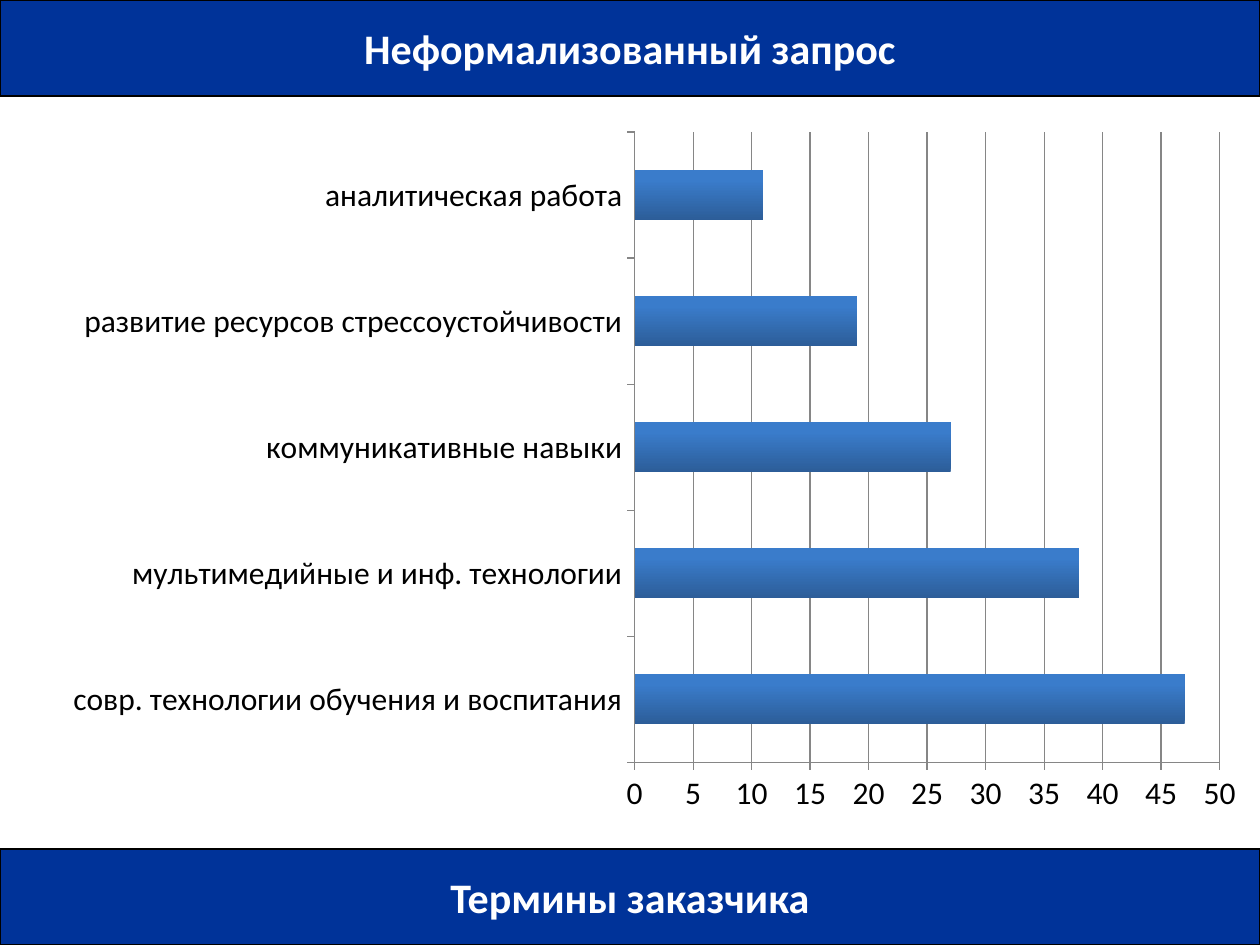
from pptx import Presentation
from pptx.chart.data import CategoryChartData as ChartData
from pptx.dml.color import RGBColor as RGB
from pptx.enum.chart import XL_CHART_TYPE as Kind, XL_TICK_MARK as Tick
from pptx.enum.shapes import MSO_SHAPE as Form
from pptx.enum.text import MSO_ANCHOR as Anchor, PP_ALIGN as Align
from pptx.util import Emu, Pt

PX = 914400 // 126
WIDE, HIGH, BAND = 1260, 945, 96
FONT = "Calibri"
HEX = {"band": "003399", "text": "FFFFFF", "ink": "000000",
       "axis": "868686", "low": "2C5D98", "high": "3A7CCB"}
TERMS = {
    "совр. технологии обучения и воспитания": 47,
    "мультимедийные и инф. технологии": 38,
    "коммуникативные навыки": 27,
    "развитие ресурсов стрессоустойчивости": 19,
    "аналитическая работа": 11,
}


def px(*nums):
    return [Emu(n * PX) for n in nums]


def color(name):
    return RGB.from_string(HEX[name])


def set_font(font, size, name, bold=False):
    font.name, font.size, font.bold = FONT, Pt(size), bold
    font.color.rgb = color(name)


def set_line(line, name):
    line.color.rgb = color(name)
    line.width = Pt(0.75)


def style_band(shape, text, top):
    """Turn a title or a rectangle into a full-width band."""
    shape.left, shape.top, shape.width, shape.height = px(0, top, WIDE, BAND)
    shape.fill.solid()
    shape.fill.fore_color.rgb = color("band")
    set_line(shape.line, "ink")
    frame = shape.text_frame
    frame.text = text
    frame.word_wrap = False
    frame.vertical_anchor = Anchor.MIDDLE
    para = frame.paragraphs[0]
    para.alignment = Align.CENTER
    set_font(para.runs[0].font, 24, "text", True)


def style_axis(axis, grid):
    axis.has_major_gridlines = grid
    axis.major_tick_mark = Tick.OUTSIDE
    axis.minor_tick_mark = Tick.NONE
    set_line(axis.format.line, "axis")
    if grid:
        set_line(axis.major_gridlines.format.line, "axis")


def add_bars(slide):
    data = ChartData()
    data.categories = list(TERMS)
    data.add_series("Series 1", list(TERMS.values()))
    box = px(49, 118, 1211, 709)
    chart = slide.shapes.add_chart(Kind.BAR_CLUSTERED, *box, data).chart
    chart.has_legend = chart.has_title = False
    set_font(chart.font, 18, "ink")
    style_axis(chart.category_axis, False)
    style_axis(chart.value_axis, True)
    axis = chart.value_axis
    axis.minimum_scale, axis.maximum_scale, axis.major_unit = 0, 50, 5
    plot = chart.plots[0]
    plot.gap_width = 150
    plot.vary_by_categories = False
    fill = plot.series[0].format.fill
    fill.gradient()
    fill.gradient_angle = 90
    for stop, name, spot in zip(fill.gradient_stops, ("low", "high"), (0, 0.8)):
        stop.color.rgb = color(name)
        stop.position = spot


def main():
    deck = Presentation()
    deck.slide_width, deck.slide_height = px(WIDE, HIGH)
    slide = deck.slides.add_slide(deck.slide_layouts[5])
    style_band(slide.shapes.title, "Неформализованный запрос", 0)
    low = HIGH - BAND
    foot = slide.shapes.add_shape(Form.RECTANGLE, *px(0, low, WIDE, BAND))
    foot.shadow.inherit = False
    style_band(foot, "Термины заказчика", low)
    add_bars(slide)
    deck.save("out.pptx")


if __name__ == "__main__":
    main()
